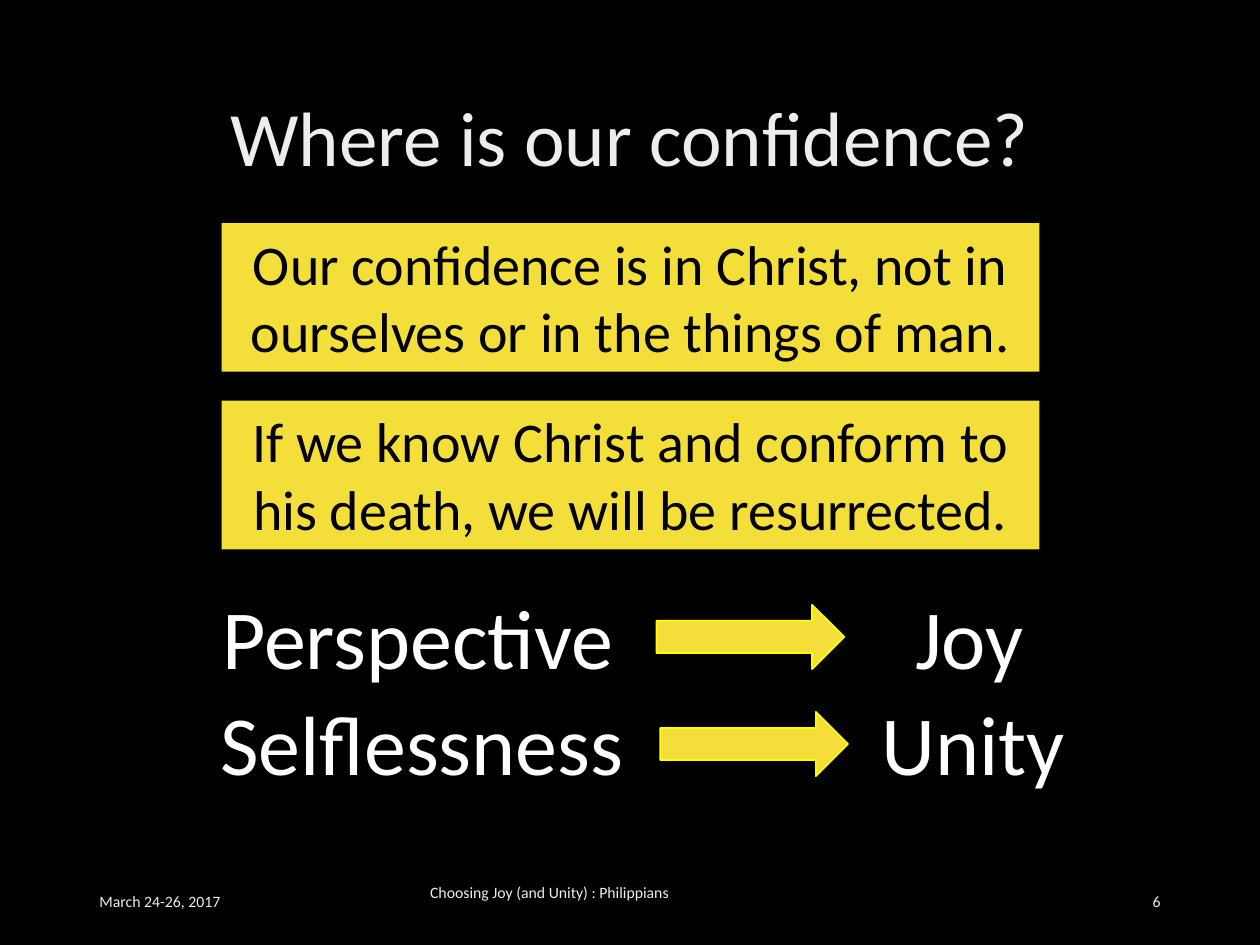
from dataclasses import dataclass

from pptx import Presentation
from pptx.dml.color import RGBColor
from pptx.enum import shapes, text
from pptx.util import Inches, Pt

COLUMNS, ROWS = 100, 75
BLACK, WHITE, SILVER = "000000", "FFFFFF", "EDEDED"
GOLD, YELLOW = "F4DE3A", "FFFF00"
FONT = "Calibri"
ALIGN, ANCHOR = text.PP_ALIGN, text.MSO_ANCHOR

presentation = Presentation()
presentation.slide_width, presentation.slide_height = Inches(10), Inches(7.5)
slide = presentation.slides.add_slide(presentation.slide_layouts[6])


@dataclass(frozen=True)
class Box:
    """A rectangle in grid columns and rows."""
    left: float
    top: float
    width: float
    height: float

    def lengths(self) -> tuple:
        """Return the rectangle in slide lengths."""
        column = presentation.slide_width / COLUMNS
        row = presentation.slide_height / ROWS
        return (round(self.left * column), round(self.top * row),
                round(self.width * column), round(self.height * row))


@dataclass(frozen=True)
class Label:
    """A piece of text with its place and look."""
    words: str
    box: Box
    size: float
    color: str = SILVER
    align: ALIGN = ALIGN.CENTER
    anchor: ANCHOR = ANCHOR.MIDDLE
    wrap: bool = True
    spacing: float = 1.0


def rgb(color: str) -> RGBColor:
    """Turn a hex string into a colour."""
    return RGBColor.from_string(color)


def write(shape, label: Label) -> None:
    """Put the label's formatted text in a shape."""
    frame = shape.text_frame
    frame.text = label.words
    frame.word_wrap = label.wrap
    frame.vertical_anchor = label.anchor
    paragraph = frame.paragraphs[0]
    paragraph.alignment = label.align
    paragraph.line_spacing = label.spacing
    font = paragraph.runs[0].font
    font.name, font.size = FONT, Pt(label.size)
    font.color.rgb = rgb(label.color)


def draw_label(label: Label) -> None:
    """Draw a text box."""
    write(slide.shapes.add_textbox(*label.box.lengths()), label)


def draw_shape(kind: shapes.MSO_SHAPE, box: Box):
    """Draw a gold shape without line or shadow."""
    shape = slide.shapes.add_shape(kind, *box.lengths())
    shape.shadow.inherit = False
    shape.fill.solid()
    shape.fill.fore_color.rgb = rgb(GOLD)
    shape.line.fill.background()
    return shape


def draw_statement(words: str, top: float) -> None:
    """Draw a statement on a gold panel."""
    label = Label(words, Box(17.6, top, 64.9, 11.8), 32, BLACK, anchor=ANCHOR.TOP)
    write(draw_shape(shapes.MSO_SHAPE.RECTANGLE, label.box), label)


def draw_word(words: str, left: float, top: float, width: float) -> None:
    """Draw a large white word."""
    draw_label(Label(words, Box(left, top, width, 8.8), 48, WHITE, wrap=False))


def draw_arrow(left: float, top: float) -> None:
    """Draw an outlined arrow from a cause to its result."""
    arrow = draw_shape(shapes.MSO_SHAPE.RIGHT_ARROW, Box(left, top, 14.9, 5.1))
    arrow.line.color.rgb = rgb(YELLOW)
    arrow.line.width = Pt(1)


def main() -> None:
    """Build the slide and save it."""
    background = slide.background.fill
    background.solid()
    background.fore_color.rgb = rgb(BLACK)

    draw_label(Label("Where is our confidence?", Box(6.9, 4, 86.2, 14.5), 44, spacing=0.9))
    draw_statement("Our confidence is in Christ, not in ourselves or in the things of man.", 17.7)
    draw_statement("If we know Christ and conform to his death, we will be resurrected.", 31.8)

    draw_word("Perspective", 16.4, 46.1, 33.6)
    draw_arrow(52.1, 48)
    draw_word("Joy", 71.5, 46.1, 10.9)
    draw_word("Selflessness", 16, 54.5, 35)
    draw_arrow(52.4, 56.5)
    draw_word("Unity", 68.9, 54.5, 16.7)

    draw_label(Label("March 24-26, 2017", Box(6.9, 69.5, 22.5, 4), 9, align=ALIGN.LEFT))
    draw_label(Label("Choosing Joy (and Unity) : Philippians", Box(26.7, 68.8, 33.8, 4), 9))
    draw_label(Label("6", Box(70.6, 69.5, 22.5, 4), 9, align=ALIGN.RIGHT))
    presentation.save("out.pptx")


if __name__ == "__main__":
    main()
